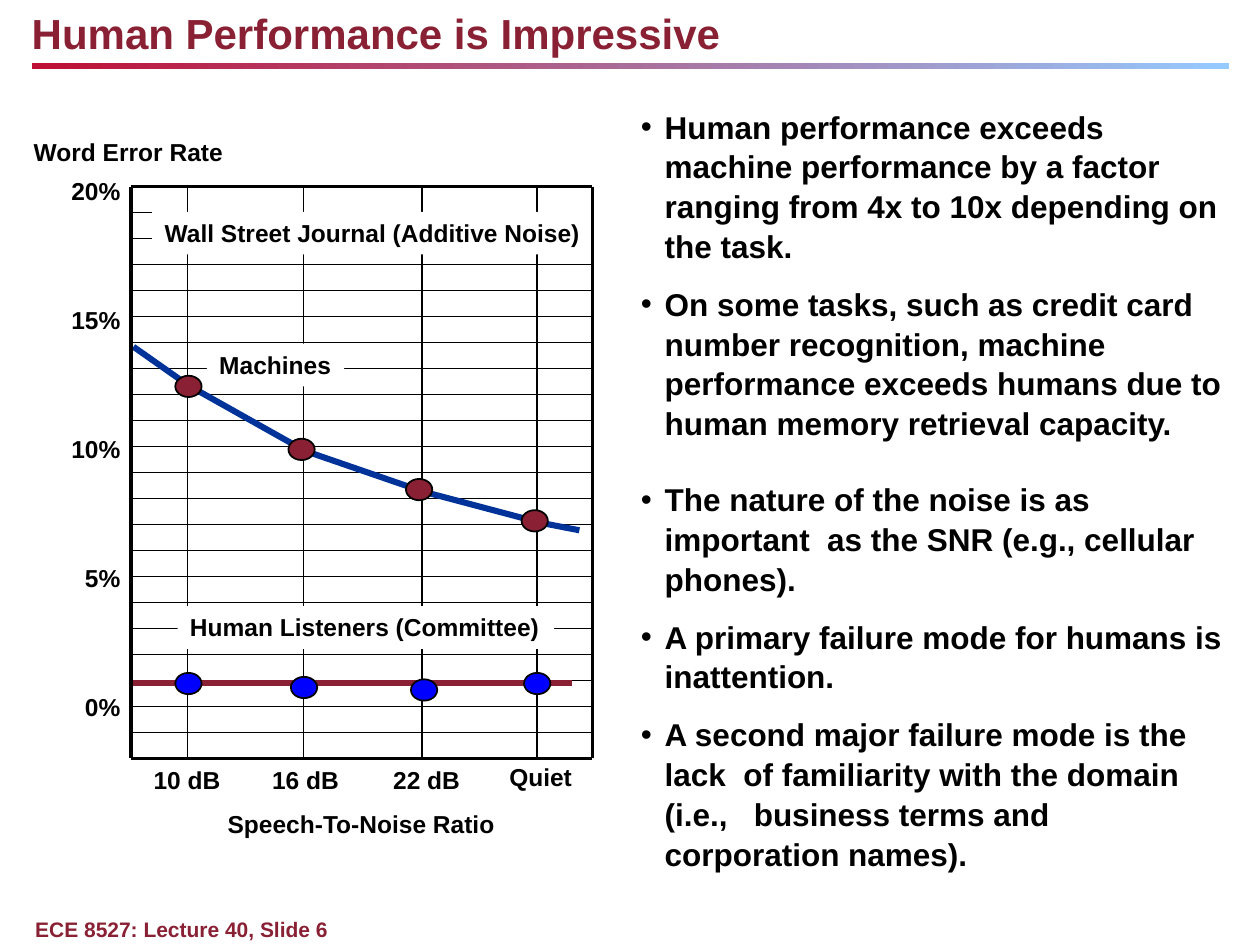
from itertools import pairwise

from lxml.etree import SubElement
from pptx import Presentation
from pptx.dml.color import RGBColor
from pptx.enum.shapes import MSO_CONNECTOR as Link, MSO_SHAPE as Shape
from pptx.enum.text import MSO_AUTO_SIZE as Fit, PP_ALIGN as Align
from pptx.oxml.ns import qn
from pptx.util import Cm, Pt

BLACK = RGBColor(0x00, 0x00, 0x00)
WHITE = RGBColor(0xFF, 0xFF, 0xFF)
MAROON = RGBColor(0x89, 0x20, 0x34)
NAVY = RGBColor(0x00, 0x33, 0x99)
BLUE = RGBColor(0x00, 0x00, 0xFF)
RED = RGBColor(0xBE, 0x0F, 0x34)
SKY = RGBColor(0x95, 0xCA, 0xFF)

LEFT, RIGHT, TOP, BASE = 2.64, 11.94, 3.76, 15.29
ROWS = 22
COLS = [3.78, 6.12, 8.51, 10.82]
DOT_W, DOT_H = 0.53, 0.43
TAG_H = 0.86

TICKS = ["20%", "15%", "10%", "5%", "0%"]
LEVELS = [("10 dB", 3.77, 15.29), ("16 dB", 6.16, 15.29),
          ("22 dB", 8.6, 15.29), ("Quiet", 10.9, 15.24)]
TITLES = [("Word Error Rate", 0.43, 2.64, 4.34),
          ("Speech-To-Noise Ratio", 4.34, 16.18, 5.92)]
PLATES = [("Wall Street Journal (Additive Noise)", 3.07, 4.27, 8.92),
          ("Machines", 4.17, 6.93, 2.77),
          ("Human Listeners (Committee)", 3.58, 12.22, 7.59)]
CURVE = [(2.69, 6.99), (3.8, 7.77), (6.15, 9.09),
         (8.53, 9.91), (10.9, 10.54), (11.68, 10.69)]
MACHINE = [(3.8, 7.79), (6.08, 9.06), (8.45, 9.87), (10.78, 10.5)]
HUMAN = [(3.8, 13.78), (6.13, 13.86), (8.55, 13.91), (10.83, 13.78)]
POINTS = [
    ("Human performance exceeds machine performance by a factor "
     "ranging from 4x to 10x depending on the task.", 0),
    ("On some tasks, such as credit card number recognition, machine "
     "performance exceeds humans due to human memory retrieval capacity.", 10.5),
    ("The nature of the noise is as important  as the SNR "
     "(e.g., cellular phones).", 21),
    ("A primary failure mode for humans is inattention.", 10.5),
    ("A second major failure mode is the lack  of familiarity with the domain "
     "(i.e.,   business terms and corporation names).", 10.5),
]


def style(item, size, color=BLACK):
    for key, value in {"name": "Arial", "size": Pt(size), "bold": True}.items():
        setattr(item.font, key, value)
    item.font.color.rgb = color


def add_text(slide, text, x, y, w, h, size, color=BLACK, align=Align.LEFT,
             wrap=False, inset=True):
    box = slide.shapes.add_textbox(Cm(x), Cm(y), Cm(w), Cm(h))
    frame = box.text_frame
    frame.word_wrap = wrap
    frame.auto_size = Fit.SHAPE_TO_FIT_TEXT
    if not inset:
        for side in ("left", "top", "right", "bottom"):
            setattr(frame, f"margin_{side}", 0)
    par = frame.paragraphs[0]
    par.text = text
    par.alignment = align
    style(par, size, color)
    return box


def add_line(slide, start, end, color=BLACK, width=1):
    ends = [Cm(v) for v in (*start, *end)]
    line = slide.shapes.add_connector(Link.STRAIGHT, *ends)
    line.line.color.rgb = color
    line.line.width = Pt(width)
    SubElement(line.element.spPr, qn("a:effectLst"))


def add_dots(slide, spots, color):
    for x, y in spots:
        dot = slide.shapes.add_shape(
            Shape.OVAL, Cm(x - DOT_W / 2), Cm(y - DOT_H / 2), Cm(DOT_W), Cm(DOT_H))
        dot.shadow.inherit = False
        dot.fill.solid()
        dot.fill.fore_color.rgb = color
        dot.line.color.rgb = BLACK
        dot.line.width = Pt(1)


def add_rule(slide):
    bar = slide.shapes.add_shape(
        Shape.RECTANGLE, Cm(0.64), Cm(1.27), Cm(24.13), Cm(0.13))
    bar.shadow.inherit = False
    bar.line.fill.background()
    bar.fill.gradient()
    bar.fill.gradient_angle = 0
    for stop, color in zip(bar.fill.gradient_stops, (RED, SKY)):
        stop.color.rgb = color


def add_grid(slide):
    step = (BASE - TOP) / ROWS
    for row in range(1, ROWS):
        y = TOP + row * step
        add_line(slide, (LEFT, y), (RIGHT, y))
    for x in COLS:
        add_line(slide, (x, TOP), (x, BASE))


def add_frame(slide):
    for y in (TOP, BASE):
        add_line(slide, (LEFT, y), (RIGHT, y), width=2)
    for x in (LEFT, RIGHT):
        add_line(slide, (x, TOP), (x, BASE), width=2)


def add_labels(slide):
    for row, text in enumerate(TICKS):
        add_text(slide, text, 1.18, 3.43 + 2.6 * row, 1.5, TAG_H, 14,
                 align=Align.RIGHT)
    for text, mid, y in LEVELS:
        add_text(slide, text, mid - 0.93, y, 1.86, TAG_H, 14, align=Align.CENTER)
    for text, x, y, w in TITLES:
        add_text(slide, text, x, y, w, TAG_H, 14)
    for text, x, y, w in PLATES:
        plate = add_text(slide, text, x, y, w, TAG_H, 14)
        plate.fill.solid()
        plate.fill.fore_color.rgb = WHITE


def add_bullets(slide):
    box = slide.shapes.add_textbox(Cm(12.67), Cm(2.01), Cm(12.42), Cm(15.27))
    frame = box.text_frame
    frame.word_wrap = True
    for i, (text, gap) in enumerate(POINTS):
        par = frame.add_paragraph() if i else frame.paragraphs[0]
        par.text = text
        par.line_spacing = 1.05
        par.space_before = Pt(gap)
        props = par._p.get_or_add_pPr()
        props.set("marL", str(Cm(0.48)))
        props.set("indent", str(-Cm(0.48)))
        SubElement(props, qn("a:buFont"), typeface="Arial")
        SubElement(props, qn("a:buChar"), char="•")
        style(par, 18)


def main():
    deck = Presentation()
    deck.slide_width, deck.slide_height = Cm(25.4), Cm(19.05)
    slide = deck.slides.add_slide(deck.slide_layouts[6])
    add_rule(slide)
    add_text(slide, "ECE 8527: Lecture 40, Slide 6", 0.71, 18.47, 22.66, 0.51,
             12, MAROON, wrap=True, inset=False)
    add_text(slide, "Human Performance is Impressive", 0.64, 0.15, 24.08, 1.02,
             24, MAROON, wrap=True, inset=False)
    add_bullets(slide)
    add_grid(slide)
    add_labels(slide)
    add_line(slide, (LEFT, 13.77), (11.53, 13.77), MAROON, 3.5)
    add_dots(slide, HUMAN, BLUE)
    for start, end in pairwise(CURVE):
        add_line(slide, start, end, NAVY, 3.5)
    add_dots(slide, MACHINE, MAROON)
    add_frame(slide)
    deck.save("out.pptx")


if __name__ == "__main__":
    main()
